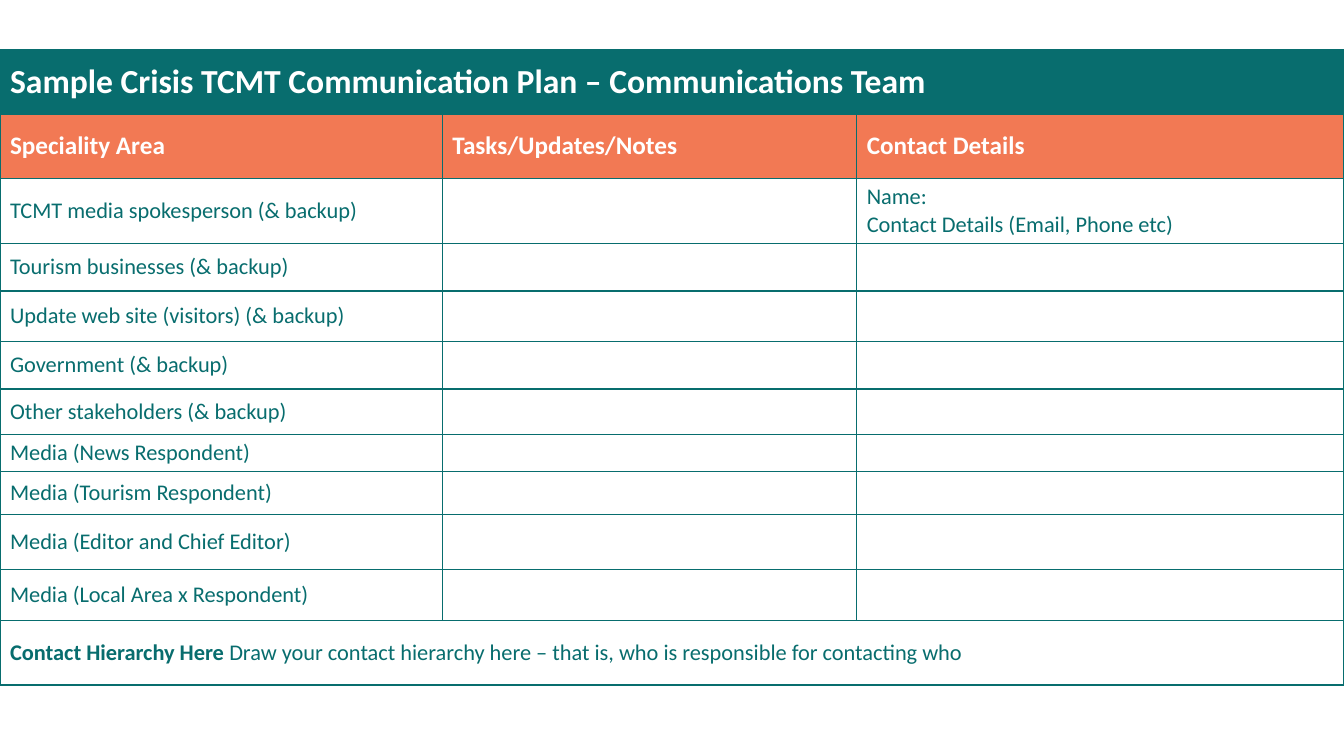
import dataclasses

import lxml.etree
import pptx
import pptx.dml.color
import pptx.enum.text
import pptx.oxml.ns
import pptx.util

Pt = pptx.util.Pt


@dataclasses.dataclass(frozen=True)
class Theme:
    """Colours, font and type sizes of the deck."""
    teal: str = "086D6E"
    coral: str = "F27954"
    white: str = "FFFFFF"
    font: str = "Calibri"
    title_size: int = 24
    header_size: int = 18
    body_size: int = 16
    border: float = 1


THEME = Theme()
COLUMN_WIDTHS = (316, 296, 348)
ROW_HEIGHTS = (46, 46, 46.4, 34, 36, 34, 32.4, 26.7, 30.8, 39, 36.6, 46)
TITLE = "Sample Crisis TCMT Communication Plan – Communications Team"
HEADERS = ("Speciality Area", "Tasks/Updates/Notes", "Contact Details")
AREAS = (
    "TCMT media spokesperson (& backup)",
    "Tourism businesses (& backup)",
    "Update web site (visitors) (& backup)",
    "Government (& backup)",
    "Other stakeholders (& backup)",
    "Media (News Respondent)",
    "Media (Tourism Respondent)",
    "Media (Editor and Chief Editor)",
    "Media (Local Area x Respondent)",
)
CONTACT_PROMPT = "Name:\nContact Details (Email, Phone etc)"
HIERARCHY_LABEL = "Contact Hierarchy Here "
HIERARCHY_NOTE = "Draw your contact hierarchy here – that is, who is responsible for contacting who"


def rgb(colour):
    """Turn a hex string into a colour."""
    return pptx.dml.color.RGBColor.from_string(colour)


def add_element(parent, tag, **attributes):
    """Append a drawing element to its parent."""
    return lxml.etree.SubElement(parent, pptx.oxml.ns.qn(tag), attributes)


def draw_borders(cell):
    """Rule all four sides of a cell."""
    properties = cell._tc.get_or_add_tcPr()
    for side in ("a:lnL", "a:lnR", "a:lnT", "a:lnB"):
        line = add_element(properties, side, w=str(Pt(THEME.border)))
        add_element(add_element(line, "a:solidFill"), "a:srgbClr", val=THEME.teal)


def format_cell(cell, fill, colour, size, bold):
    """Give a cell its borders, fill and type."""
    draw_borders(cell)
    cell.fill.solid()
    cell.fill.fore_color.rgb = rgb(fill)
    cell.vertical_anchor = pptx.enum.text.MSO_ANCHOR.MIDDLE
    for para in cell.text_frame.paragraphs:
        for span in para.runs:
            span.font.name = THEME.font
            span.font.size = Pt(size)
            span.font.bold = bold
            span.font.color.rgb = rgb(colour)
        if not para.runs:
            add_element(para._p, "a:endParaRPr", sz=str(size * 100))


def row_style(row, last):
    """Return the fill, text colour, size and weight of a row."""
    if row == 0:
        return THEME.teal, THEME.white, THEME.title_size, True
    if row == 1:
        return THEME.coral, THEME.white, THEME.header_size, True
    return THEME.white, THEME.teal, THEME.body_size, row == last


def add_plan_table(page, left, top, width, height):
    """Place the communication plan table in the given box."""
    last = len(ROW_HEIGHTS) - 1
    table = page.shapes.add_table(
        last + 1, len(COLUMN_WIDTHS), Pt(left), Pt(top), Pt(width), Pt(height)
    ).table
    for column, share in zip(table.columns, COLUMN_WIDTHS):
        column.width = Pt(width * share / sum(COLUMN_WIDTHS))
    for row, share in zip(table.rows, ROW_HEIGHTS):
        row.height = Pt(height * share / sum(ROW_HEIGHTS))

    for row in (0, last):
        table.cell(row, 0).merge(table.cell(row, len(COLUMN_WIDTHS) - 1))
    table.cell(0, 0).text_frame.text = TITLE
    for column, header in enumerate(HEADERS):
        table.cell(1, column).text_frame.text = header
    for row, area in enumerate(AREAS, start=2):
        table.cell(row, 0).text_frame.text = area
    table.cell(2, 2).text_frame.text = CONTACT_PROMPT
    hierarchy = table.cell(last, 0).text_frame.paragraphs[0]
    hierarchy.text = HIERARCHY_LABEL
    note = hierarchy.add_run()
    note.text = HIERARCHY_NOTE

    for row in range(last + 1):
        for column in range(len(COLUMN_WIDTHS)):
            format_cell(table.cell(row, column), *row_style(row, last))
    note.font.bold = False


def main():
    """Build and save the deck."""
    deck = pptx.Presentation()
    deck.slide_width, deck.slide_height = Pt(960), Pt(540)
    page = deck.slides.add_slide(deck.slide_layouts.get_by_name("Blank"))
    add_plan_table(page, 0, 35.5, sum(COLUMN_WIDTHS), sum(ROW_HEIGHTS))
    deck.save("out.pptx")


if __name__ == "__main__":
    main()
